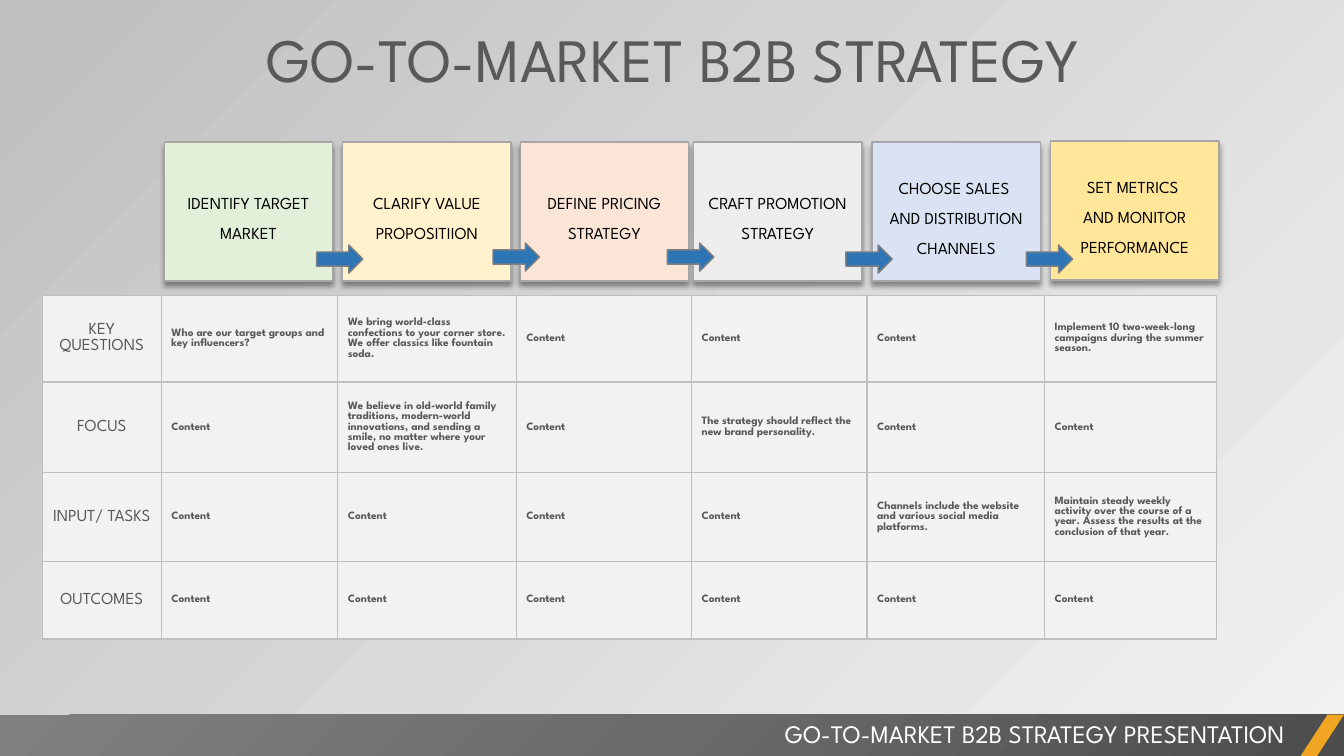
from lxml import etree
from pptx import Presentation
from pptx.dml.color import RGBColor
from pptx.enum.shapes import MSO_SHAPE
from pptx.enum.text import MSO_ANCHOR, PP_ALIGN
from pptx.oxml import parse_xml
from pptx.util import Inches, Pt

RECT, SLANT, ARROW = MSO_SHAPE.RECTANGLE, MSO_SHAPE.PARALLELOGRAM, MSO_SHAPE.RIGHT_ARROW
MIDDLE = MSO_ANCHOR.MIDDLE
LEFT, CENTER, RIGHT = PP_ALIGN.LEFT, PP_ALIGN.CENTER, PP_ALIGN.RIGHT
FONT = "League Spartan"
NS = "http://schemas.openxmlformats.org/drawingml/2006/main"

BLACK = RGBColor(0x00, 0x00, 0x00)
WHITE = RGBColor(0xFF, 0xFF, 0xFF)
TEXT = RGBColor(0x59, 0x59, 0x59)
PALE = RGBColor(0xF2, 0xF2, 0xF2)
SILVER = RGBColor(0xBF, 0xBF, 0xBF)
EDGE = RGBColor(0xA6, 0xA6, 0xA6)
GRAY = RGBColor(0x80, 0x80, 0x80)
BLUE = RGBColor(0x2E, 0x75, 0xB6)
AMBER = RGBColor(0xF0, 0xA6, 0x22)
GREEN = RGBColor(0xE2, 0xF0, 0xD9)
CREAM = RGBColor(0xFF, 0xF2, 0xCC)
PEACH = RGBColor(0xFB, 0xE5, 0xD6)
MIST = RGBColor(0xED, 0xED, 0xED)
SKY = RGBColor(0xDA, 0xE3, 0xF3)
GOLD = RGBColor(0xFF, 0xE6, 0x99)

TITLE = "GO-TO-MARKET B2B STRATEGY"
FOOTER = "GO-TO-MARKET B2B STRATEGY PRESENTATION"
CARDS = [
    (1.63, 1.41, GREEN, ["IDENTIFY TARGET MARKET"]),
    (3.4, 1.41, CREAM, ["CLARIFY VALUE PROPOSITIION"]),
    (5.16, 1.41, PEACH, ["DEFINE PRICING STRATEGY"]),
    (6.88, 1.41, MIST, ["CRAFT PROMOTION STRATEGY"]),
    (8.65, 1.41, SKY, ["CHOOSE SALES ", "AND DISTRIBUTION CHANNELS"]),
    (10.42, 1.4, GOLD, ["SET METRICS ", "AND MONITOR PERFORMANCE"]),
]
ARROWS = [(3.14, 2.43), (4.89, 2.41), (6.62, 2.41), (8.39, 2.43), (10.18, 2.43)]
COLS = [1.18, 1.75, 1.77, 1.74, 1.74, 1.76, 1.71]
ROWS = [0.86, 0.9, 0.88, 0.77]
HEADS = ["KEY QUESTIONS", "FOCUS", "INPUT/ TASKS", "OUTCOMES"]
FILLER = "Content"
NOTES = {
    (0, 1): "Who are our target groups and key influencers?",
    (0, 2): "We bring world-class confections to your corner store. "
            "We offer classics like fountain soda.",
    (0, 6): "Implement 10 two-week-long campaigns during the summer season.",
    (1, 2): "We believe in old-world family traditions, modern-world innovations, "
            "and sending a smile, no matter where your loved ones live.",
    (1, 4): "The strategy should reflect the new brand personality.",
    (2, 5): "Channels include the website and various social media platforms.",
    (2, 6): "Maintain steady weekly activity over the course of a year. "
            "Assess the results at the conclusion of that year.",
}
SHADOW = (f'<a:effectLst xmlns:a="{NS}"><a:outerShdw blurRad="50800" dist="38100" '
          'dir="5400000" algn="t" rotWithShape="0"><a:srgbClr val="000000">'
          '<a:alpha val="40000"/></a:srgbClr></a:outerShdw></a:effectLst>')
RADIAL = (f'<a:gradFill xmlns:a="{NS}" rotWithShape="1"><a:gsLst>'
          '<a:gs pos="0"><a:srgbClr val="4C4C4C"/></a:gs>'
          '<a:gs pos="50000"><a:srgbClr val="6B6B6B"/></a:gs>'
          '<a:gs pos="100000"><a:srgbClr val="808080"/></a:gs></a:gsLst>'
          '<a:path path="circle"><a:fillToRect l="100000" t="100000"/></a:path></a:gradFill>')


def write(frame, lines, size, color, align, bold=False, space=None):
    frame.word_wrap = True
    para = frame.paragraphs[0]
    para.alignment = align
    if space:
        para.line_spacing = space
    for i, line in enumerate(lines):
        if i:
            para.add_line_break()
        run = para.add_run()
        run.text = line
        font = run.font
        font.name, font.size, font.bold = FONT, Pt(size), bold
        font.color.rgb = color


def label(slide, box, text, size, color, align):
    frame = slide.shapes.add_textbox(*map(Inches, box)).text_frame
    write(frame, [text], size, color, align)


def draw(slide, kind, box, fill, line=None):
    shape = slide.shapes.add_shape(kind, *map(Inches, box))
    shape.shadow.inherit = False
    shape.fill.solid()
    shape.fill.fore_color.rgb = fill
    if line is None:
        shape.line.fill.background()
    else:
        shape.line.color.rgb = line
        shape.line.width = Pt(1)
    return shape


def swap(shape, tag, xml):
    props = shape._element.spPr
    props.replace(props.find(f"{{{NS}}}{tag}"), parse_xml(xml))


def border(cell):
    props = cell._tc.get_or_add_tcPr()
    for side in ("lnL", "lnR", "lnT", "lnB"):
        line = etree.SubElement(props, f"{{{NS}}}{side}", w="12700")
        solid = etree.SubElement(line, f"{{{NS}}}solidFill")
        etree.SubElement(solid, f"{{{NS}}}srgbClr", val=str(SILVER))


def add_grid(slide):
    box = (0.42, 2.93, sum(COLS), sum(ROWS))
    grid = slide.shapes.add_table(len(ROWS), len(COLS), *map(Inches, box)).table
    grid.first_row = grid.horz_banding = False
    for col, width in zip(grid.columns, COLS):
        col.width = Inches(width)
    for r, height in enumerate(ROWS):
        grid.rows[r].height = Inches(height)
        for c in range(len(COLS)):
            cell = grid.cell(r, c)
            border(cell)
            cell.fill.solid()
            cell.fill.fore_color.rgb = PALE
            cell.vertical_anchor = MIDDLE
            if c == 0:
                write(cell.text_frame, [HEADS[r]], 12, TEXT, CENTER)
            else:
                text = NOTES.get((r, c), FILLER)
                write(cell.text_frame, [text], 8, TEXT, LEFT, bold=True)


def main():
    deck = Presentation()
    deck.slide_width, deck.slide_height = Inches(13.33), Inches(7.5)
    slide = deck.slides.add_slide(deck.slide_layouts[6])
    back = slide.background.fill
    back.gradient()
    back.gradient_angle = 135
    for stop, color, place in zip(back.gradient_stops, (PALE, SILVER), (0, 1)):
        stop.color.rgb = color
        stop.position = place

    bar = draw(slide, RECT, (0, 7.09, 13.33, 0.41), GRAY)
    swap(bar, "solidFill", RADIAL)
    slash = draw(slide, SLANT, (12.9, 7.09, 0.43, 0.41), AMBER)
    slash.adjustments[0] = 0.65
    label(slide, (4.31, 7.08, 8.53, 0.4), FOOTER, 18, WHITE, RIGHT)

    for left, top, fill, lines in CARDS:
        card = draw(slide, RECT, (left, top, 1.67, 1.38), fill, EDGE)
        swap(card, "effectLst", SHADOW)
        frame = card.text_frame
        frame.margin_left = frame.margin_right = frame.margin_bottom = Inches(0.02)
        frame.margin_top = Inches(0.04)
        frame.vertical_anchor = MIDDLE
        write(frame, lines, 12, BLACK, CENTER, space=1.5)

    add_grid(slide)
    for left, top in ARROWS:
        draw(slide, ARROW, (left, top, 0.46, 0.28), BLUE, GRAY)
    label(slide, (0.16, 0.16, 13.04, 0.84), TITLE, 44, TEXT, CENTER)
    deck.save("out.pptx")


if __name__ == "__main__":
    main()
